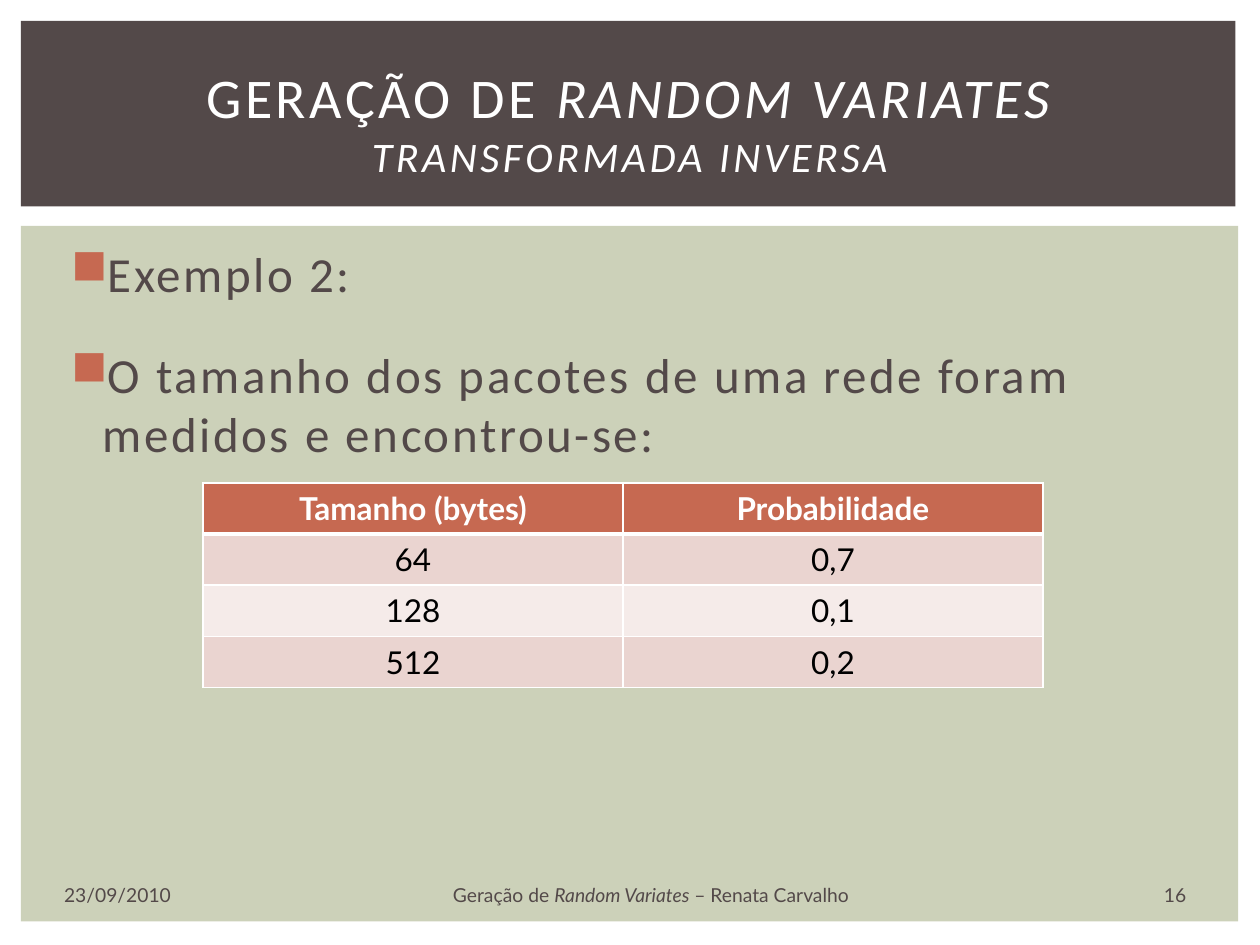
from lxml.etree import SubElement
from pptx import Presentation
from pptx.dml.color import RGBColor
from pptx.enum.shapes import MSO_SHAPE
from pptx.enum.text import MSO_ANCHOR, MSO_AUTO_SIZE, PP_ALIGN
from pptx.oxml import parse_xml
from pptx.oxml.ns import nsdecls, qn
from pptx.util import Pt

WHITE = RGBColor(0xFF, 0xFF, 0xFF)
BLACK = RGBColor(0, 0, 0)
BROWN = RGBColor(0x53, 0x49, 0x49)
SAGE = RGBColor(0xCC, 0xD1, 0xB9)
RUST = RGBColor(0xC6, 0x69, 0x51)
ROSE = RGBColor(0xEA, 0xD4, 0xD0)
PALE_ROSE = RGBColor(0xF5, 0xEB, 0xE9)

# Content: each line of text is a list of (text, format) runs
TITLE = [
    ("GERAÇÃO DE ", {}),
    ("RANDOM VARIATES", {"italic": True}),
    ("\v", {}),
    ("TRANSFORMADA INVERSA", {"italic": True, "size": 24}),
]
BULLETS = [
    "Exemplo 2:",
    "O tamanho dos pacotes de uma rede foram medidos e encontrou-se:",
]
PACKET_ROWS = [
    ("Tamanho (bytes)", "Probabilidade"),
    ("64", "0,7"),
    ("128", "0,1"),
    ("512", "0,2"),
]
# Footer: left, width, alignment, runs
FOOTER = [
    (29.5, 168, PP_ALIGN.LEFT, [("23/09/2010", {})]),
    (240, 264, PP_ALIGN.CENTER, [
        ("Geração de ", {}),
        ("Random Variates ", {"italic": True}),
        ("– Renata Carvalho", {}),
    ]),
    (648.5, 46, PP_ALIGN.CENTER, [("16", {})]),
]
FOOTER_TOP, FOOTER_HEIGHT = 500.5, 21.5

# Left, top, width, height, colour
BANDS = [(12, 129, 695.5, 397.5, SAGE), (12, 12, 694, 106, BROWN)]

TABLE_LEFT, TABLE_TOP = 116, 276
COLUMN_WIDTH, ROW_HEIGHT = 240, 29.2


def add_run(paragraph, text, font="Lato", size=18, color=BROWN,
            bold=False, italic=False, spacing=0):
    if text == "\v":
        paragraph.add_line_break()
        return
    run = paragraph.add_run()
    run.text = text
    run.font.name = font
    run.font.size = Pt(size)
    run.font.color.rgb = color
    run.font.bold = bold
    run.font.italic = italic
    if spacing:
        run.font._element.set("spc", str(int(spacing * 100)))


def add_bullet(paragraph):
    properties = paragraph._p.get_or_add_pPr()
    properties.set("marL", str(Pt(21.6)))
    properties.set("indent", str(Pt(-18)))
    color = SubElement(properties, qn("a:buClr"))
    SubElement(color, qn("a:srgbClr")).set("val", str(RUST))
    SubElement(properties, qn("a:buChar")).set("char", "■")


def add_borders(cell, bottom):
    properties = cell._tc.get_or_add_tcPr()
    widths = {"lnL": 1, "lnR": 1, "lnT": 1, "lnB": bottom}
    for position, (side, width) in enumerate(widths.items()):
        properties.insert(position, parse_xml(
            f'<a:{side} {nsdecls("a")} w="{Pt(width)}"><a:solidFill>'
            f'<a:srgbClr val="{WHITE}"/></a:solidFill></a:{side}>'))


def add_box(slide, left, top, width, height):
    box = slide.shapes.add_textbox(Pt(left), Pt(top), Pt(width), Pt(height))
    box.text_frame.word_wrap = True
    return box.text_frame


def main():
    deck = Presentation()
    deck.slide_width, deck.slide_height = Pt(720), Pt(540)
    slide = deck.slides.add_slide(deck.slide_layouts[5])

    # Background bands
    for left, top, width, height, color in BANDS:
        band = slide.shapes.add_shape(
            MSO_SHAPE.RECTANGLE, Pt(left), Pt(top), Pt(width), Pt(height))
        band.shadow.inherit = False
        band.fill.solid()
        band.fill.fore_color.rgb = color
        band.line.fill.background()

    # Title, brought in front of its band
    title = slide.shapes.title
    title.left, title.top, title.width, title.height = (
        Pt(30), Pt(28), Pt(660), Pt(83))
    slide.shapes._spTree.append(title._element)
    title_frame = title.text_frame
    title_frame.auto_size = MSO_AUTO_SIZE.NONE
    title_frame.vertical_anchor = MSO_ANCHOR.MIDDLE
    heading = title_frame.paragraphs[0]
    heading.alignment = PP_ALIGN.CENTER
    title_style = {"font": "Calibri", "size": 32, "color": WHITE, "spacing": 2}
    for text, style in TITLE:
        add_run(heading, text, **{**title_style, **style})

    # Bulleted body
    body = add_box(slide, 30, 135.5, 662, 347)
    for index, text in enumerate(BULLETS):
        paragraph = body.add_paragraph() if index else body.paragraphs[0]
        paragraph.space_before = Pt(24)
        add_bullet(paragraph)
        add_run(paragraph, text, font="Calibri", size=28, spacing=1.5)

    # Footer
    for left, width, alignment, runs in FOOTER:
        footer = add_box(slide, left, FOOTER_TOP, width, FOOTER_HEIGHT)
        footer.vertical_anchor = MSO_ANCHOR.MIDDLE
        footer.paragraphs[0].alignment = alignment
        for text, style in runs:
            add_run(footer.paragraphs[0], text, size=11, **style)

    # Packet size table
    row_count, column_count = len(PACKET_ROWS), len(PACKET_ROWS[0])
    table = slide.shapes.add_table(
        row_count, column_count, Pt(TABLE_LEFT), Pt(TABLE_TOP),
        Pt(COLUMN_WIDTH * column_count), Pt(ROW_HEIGHT * row_count)).table
    for row, values in enumerate(PACKET_ROWS):
        header = row == 0
        fill = RUST if header else ROSE if row % 2 else PALE_ROSE
        for column, value in enumerate(values):
            cell = table.cell(row, column)
            cell.fill.solid()
            cell.fill.fore_color.rgb = fill
            cell.vertical_anchor = MSO_ANCHOR.MIDDLE
            add_borders(cell, bottom=3 if header else 1)
            paragraph = cell.text_frame.paragraphs[0]
            paragraph.alignment = PP_ALIGN.CENTER
            add_run(paragraph, value, bold=header,
                    color=WHITE if header else BLACK)

    deck.save("out.pptx")


if __name__ == "__main__":
    main()
